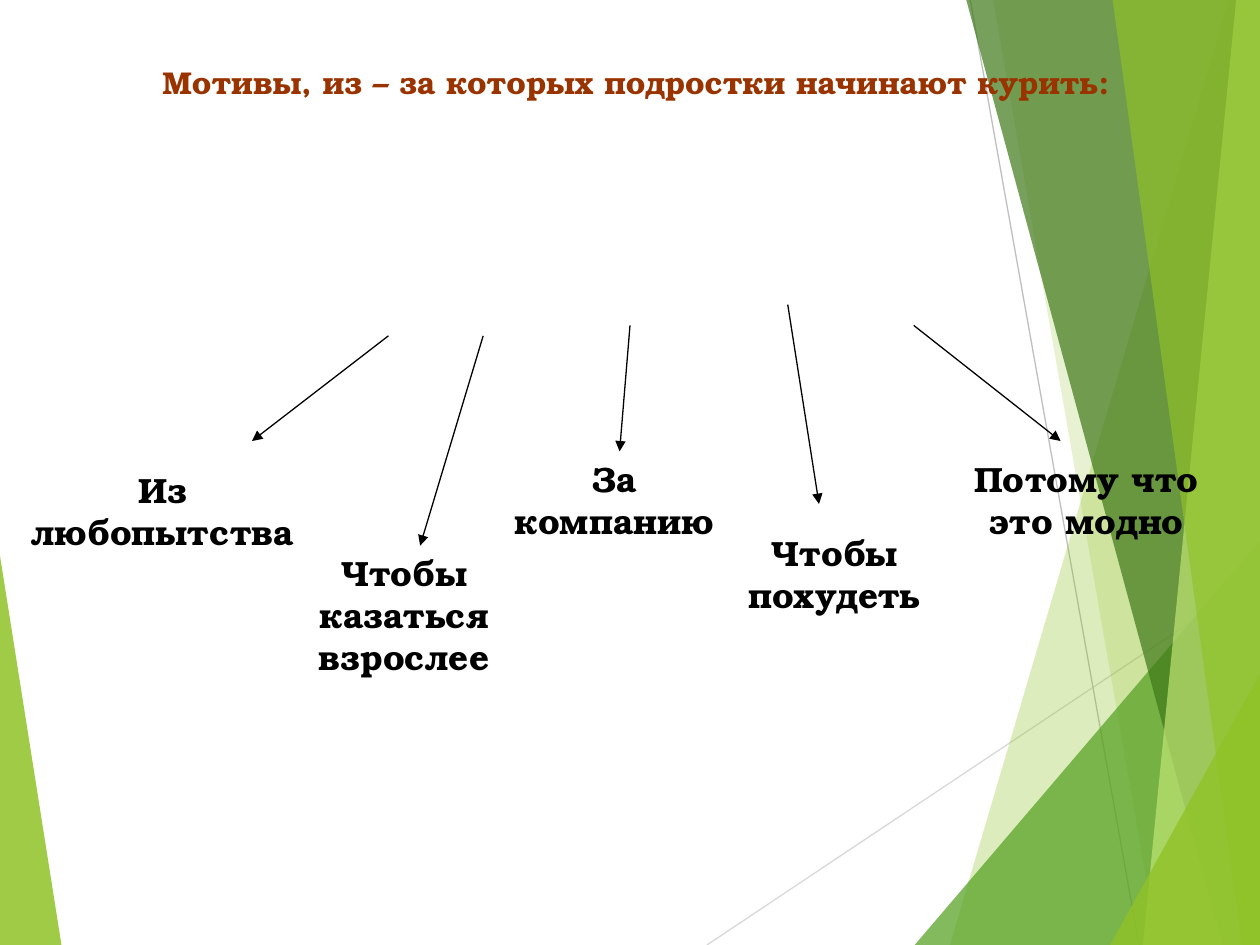
from dataclasses import dataclass

from lxml import etree
from pptx import Presentation
from pptx.dml.color import RGBColor
from pptx.enum import shapes, text
from pptx.oxml import ns
from pptx.shapes.connector import Connector
from pptx.slide import Slide
from pptx.text.text import TextFrame
from pptx.util import Cm, Pt

Point = tuple[float, float]
WIDTH, HEIGHT = 25.4, 19.05


@dataclass(frozen=True)
class Theme:
    font: str = "TeX Gyre Bonum"
    heading: str = "993300"
    ink: str = "000000"
    lime: str = "90C226"
    leaf: str = "54A021"
    forest: str = "3F7819"
    pale: str = "C0E474"
    ray_light: str = "D9D9D9"
    ray_dark: str = "BFBFBF"
    heading_size: int = 18
    motive_size: int = 20
    stroke: float = 0.75


@dataclass(frozen=True)
class Facet:
    corners: tuple[Point, ...]
    color: str
    opacity: int


@dataclass(frozen=True)
class Ray:
    start: Point
    end: Point
    color: str


@dataclass(frozen=True)
class Motive:
    wording: str
    left: float
    top: float
    width: float
    height: float
    arrow_start: Point
    arrow_end: Point


THEME = Theme()


def right_band(top: float, foot: float, color: str, opacity: int) -> Facet:
    corners = ((top, 0), (foot, HEIGHT), (WIDTH, HEIGHT), (WIDTH, 0))
    return Facet(corners, color, opacity)


def right_corner(foot: float, rise: float, color: str, opacity: int) -> Facet:
    corners = ((foot, HEIGHT), (WIDTH, rise), (WIDTH, HEIGHT))
    return Facet(corners, color, opacity)


LEFT_WEDGE = Facet(((0, 11.2), (1.24, HEIGHT), (0, HEIGHT)), THEME.lime, 85)
RAYS = (
    Ray((14.25, HEIGHT), (WIDTH, 11.61), THEME.ray_light),
    Ray((19.56, 0), (22.96, HEIGHT), THEME.ray_dark),
)
RIGHT_FACETS = (
    right_band(24.77, 19.15, THEME.lime, 30),
    right_band(20.02, 23.34, THEME.lime, 20),
    right_corner(18.44, 10.9, THEME.leaf, 72),
    right_band(19.48, 24.64, THEME.forest, 70),
    right_band(24.92, 23.04, THEME.pale, 70),
    right_band(22.43, 25.04, THEME.lime, 65),
    right_corner(22.38, 13.59, THEME.lime, 80),
)
MOTIVES = (
    Motive("Из любопытства", 0, 9.31, 6.56, 1.96, (7.83, 6.77), (5.08, 8.89)),
    Motive("Чтобы казаться взрослее", 5.08, 11, 6.14, 2.81, (9.74, 6.77), (8.47, 11)),
    Motive("За компанию", 9.74, 9.1, 5.29, 1.96, (12.7, 6.56), (12.49, 9.1)),
    Motive("Чтобы похудеть", 14.18, 10.58, 5.29, 1.96, (15.88, 6.14), (16.51, 10.16)),
    Motive("Потому что это модно", 19.26, 9.1, 5.29, 1.96, (18.42, 6.56), (21.38, 8.89)),
)


def draw_facet(slide: Slide, facet: Facet) -> None:
    first, *rest = [(Cm(x), Cm(y)) for x, y in facet.corners]
    outline = slide.shapes.build_freeform(*first)
    outline.add_line_segments(rest, close=True)
    pane = outline.convert_to_shape()
    pane.shadow.inherit = False
    pane.line.fill.background()
    pane.fill.solid()
    pane.fill.fore_color.rgb = RGBColor.from_string(facet.color)
    tint = pane.element.spPr.find(ns.qn("a:solidFill"))[0]
    etree.SubElement(tint, ns.qn("a:alpha"), val=str(facet.opacity * 1000))


def draw_line(slide: Slide, start: Point, end: Point, color: str) -> Connector:
    line = slide.shapes.add_connector(
        shapes.MSO_CONNECTOR.STRAIGHT, *map(Cm, start + end)
    )
    line.line.color.rgb = RGBColor.from_string(color)
    line.line.width = Pt(THEME.stroke)
    etree.SubElement(line.element.spPr, ns.qn("a:effectLst"))
    return line


def draw_arrow(slide: Slide, start: Point, end: Point) -> None:
    arrow = draw_line(slide, start, end, THEME.ink)
    stroke = arrow.element.spPr.find(ns.qn("a:ln"))
    etree.SubElement(stroke, ns.qn("a:tailEnd"), type="triangle")


def write(frame: TextFrame, wording: str, size: int, color: str) -> None:
    frame.text = wording
    frame.word_wrap = True
    frame.vertical_anchor = text.MSO_ANCHOR.TOP
    paragraph = frame.paragraphs[0]
    paragraph.alignment = text.PP_ALIGN.CENTER
    for run in paragraph.runs:
        run.font.name = THEME.font
        run.font.size = Pt(size)
        run.font.bold = True
        run.font.color.rgb = RGBColor.from_string(color)


def draw_heading(slide: Slide) -> None:
    heading = slide.shapes.title
    heading.element.getparent().append(heading.element)
    heading.left, heading.top = Cm(1.06), Cm(0)
    heading.width, heading.height = Cm(23.52), Cm(17.99)
    frame = heading.text_frame
    write(
        frame,
        "Мотивы, из – за которых подростки начинают курить:",
        THEME.heading_size,
        THEME.heading,
    )
    frame.auto_size = text.MSO_AUTO_SIZE.NONE
    frame.margin_top = Cm(1.27)


def draw_motive(slide: Slide, motive: Motive) -> None:
    label = slide.shapes.add_textbox(
        Cm(motive.left), Cm(motive.top), Cm(motive.width), Cm(motive.height)
    )
    write(label.text_frame, motive.wording, THEME.motive_size, THEME.ink)
    label.text_frame.auto_size = text.MSO_AUTO_SIZE.SHAPE_TO_FIT_TEXT


def main() -> None:
    deck = Presentation()
    deck.slide_width, deck.slide_height = Cm(WIDTH), Cm(HEIGHT)
    slide = deck.slides.add_slide(deck.slide_layouts.get_by_name("Title Only"))
    draw_facet(slide, LEFT_WEDGE)
    for ray in RAYS:
        draw_line(slide, ray.start, ray.end, ray.color)
    for facet in RIGHT_FACETS:
        draw_facet(slide, facet)
    draw_heading(slide)
    for motive in MOTIVES:
        draw_motive(slide, motive)
    for motive in MOTIVES:
        draw_arrow(slide, motive.arrow_start, motive.arrow_end)
    deck.save("out.pptx")


if __name__ == "__main__":
    main()
